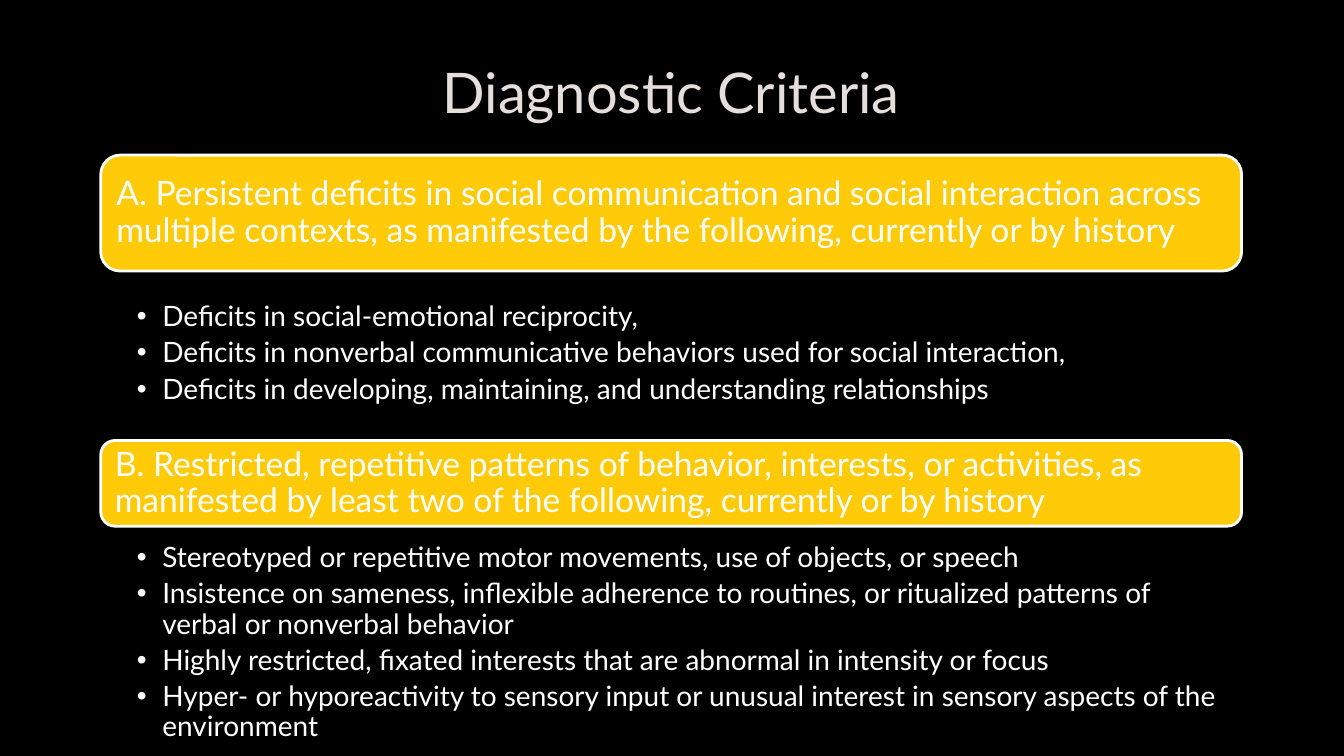
from pptx import Presentation
from pptx.dml.color import RGBColor
from pptx.enum.shapes import MSO_SHAPE
from pptx.enum.text import MSO_ANCHOR, MSO_AUTO_SIZE, PP_ALIGN
from pptx.oxml.ns import qn
from pptx.util import Cm, Pt
from lxml.etree import SubElement

FONT = "Lato"
WHITE = "FFFFFF"
LEFT, WIDTH = 2.54, 28.75
CRITERIA = [
    {
        "heading": "A. Persistent deficits in social communication and social interaction across "
                   "multiple contexts, as manifested by the following, currently or by history",
        "banner": (LEFT, 3.91, WIDTH, 2.92),
        "list": (LEFT, 6.83, WIDTH, 4.62),
        "insets": (0.91, 0.79, 0.3, 0.05),
        "items": [
            "Deficits in social-emotional reciprocity,",
            "Deficits in nonverbal communicative behaviors used for social interaction,",
            "Deficits in developing, maintaining, and understanding relationships",
        ],
    },
    {
        "heading": "B. Restricted, repetitive patterns of behavior, interests, or activities, as "
                   "manifested by least two of the following, currently or by history",
        "banner": (LEFT, 11.1, WIDTH, 2.16),
        "list": (LEFT, 13.61, WIDTH, 4.88),
        "insets": (0.91, 0.08, 0.41, 0.08),
        "items": [
            "Stereotyped or repetitive motor movements, use of objects, or speech",
            "Insistence on sameness, inflexible adherence to routines, or ritualized patterns of "
            "verbal or nonverbal behavior",
            "Highly restricted, fixated interests that are abnormal in intensity or focus",
            "Hyper- or hyporeactivity to sensory input or unusual interest in sensory aspects of "
            "the environment",
        ],
    },
]


def color(value):
    """Turn a hex string into a colour."""
    return RGBColor.from_string(value)


def place(shape, box):
    """Move a shape to a box of left, top, width and height in centimetres."""
    shape.left, shape.top, shape.width, shape.height = map(Cm, box)


def add_bullet(paragraph, indent):
    """Give a paragraph a round bullet with a hanging indent."""
    properties = paragraph._p.get_or_add_pPr()
    properties.set("marL", str(Cm(indent)))
    properties.set("indent", str(-Cm(indent)))
    SubElement(properties, qn("a:buChar")).set("char", "•")


def write_text(shape, texts, size, fill=WHITE, align=PP_ALIGN.LEFT, anchor=MSO_ANCHOR.MIDDLE,
               insets=(0.25, 0, 0.25, 0), line_spacing=0.9, space_after=0, bullet_indent=None):
    """Write one paragraph per text into a shape with the given format."""
    frame = shape.text_frame
    frame.word_wrap = True
    frame.auto_size = MSO_AUTO_SIZE.NONE
    frame.vertical_anchor = anchor
    frame.margin_left, frame.margin_top, frame.margin_right, frame.margin_bottom = map(Cm, insets)
    for index, text in enumerate(texts):
        paragraph = frame.add_paragraph() if index else frame.paragraphs[0]
        paragraph.alignment = align
        paragraph.line_spacing = line_spacing
        paragraph.space_before = Pt(0)
        paragraph.space_after = Pt(space_after)
        if bullet_indent:
            add_bullet(paragraph, bullet_indent)
        run = paragraph.add_run()
        run.text = text
        run.font.name = FONT
        run.font.size = Pt(size)
        run.font.color.rgb = color(fill)


def add_title(slide, box, text):
    """Place the centred slide title."""
    title = slide.shapes.title
    place(title, box)
    write_text(title, [text], size=40, fill="E5DEDB", align=PP_ALIGN.CENTER, line_spacing=1.0)


def add_banner(slide, box, heading):
    """Draw a rounded yellow banner with its heading."""
    banner = slide.shapes.add_shape(MSO_SHAPE.ROUNDED_RECTANGLE, *map(Cm, box))
    banner.shadow.inherit = False
    banner.fill.solid()
    banner.fill.fore_color.rgb = color("FFCA08")
    banner.line.color.rgb = color(WHITE)
    banner.line.width = Pt(2)
    write_text(banner, [heading], size=24)


def add_list(placeholder, box, items, insets):
    """Fill a body placeholder with a bulleted list."""
    place(placeholder, box)
    write_text(placeholder, items, size=20, anchor=MSO_ANCHOR.TOP, insets=insets,
               space_after=4.3, bullet_indent=0.64)


def build_slide(presentation):
    """Build the slide of diagnostic criteria."""
    slide = presentation.slides.add_slide(presentation.slide_layouts.get_by_name("Two Content"))
    slide.background.fill.solid()
    slide.background.fill.fore_color.rgb = color("000000")
    add_title(slide, (LEFT, 0.94, WIDTH, 2.69), "Diagnostic Criteria")
    bodies = list(slide.placeholders)[1:]
    for body, criterion in zip(bodies, CRITERIA):
        add_banner(slide, criterion["banner"], criterion["heading"])
        add_list(body, criterion["list"], criterion["items"], criterion["insets"])


def main():
    """Create and save the presentation."""
    presentation = Presentation()
    presentation.slide_width, presentation.slide_height = Cm(33.87), Cm(19.05)
    build_slide(presentation)
    presentation.save("out.pptx")


if __name__ == "__main__":
    main()
